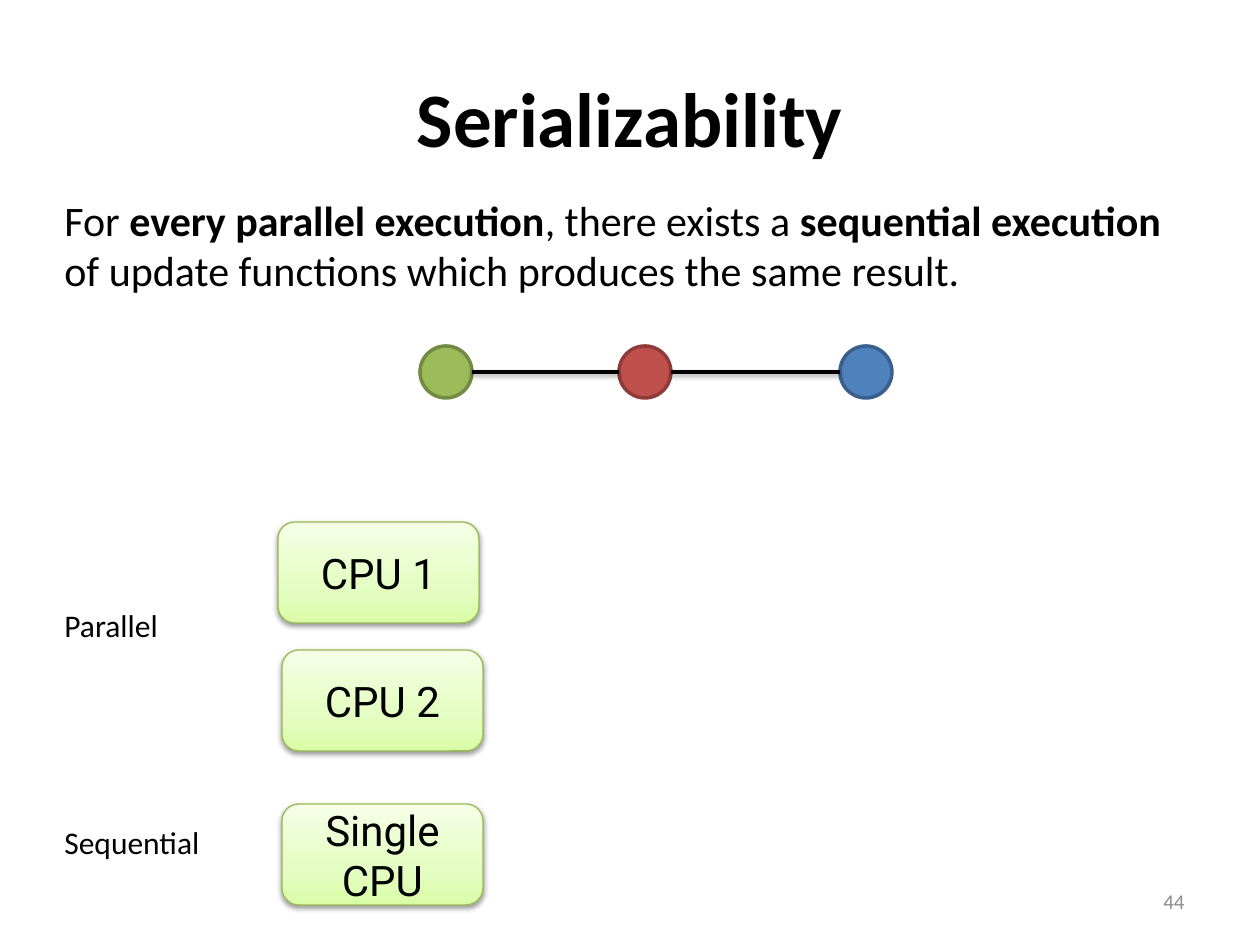
import pptx
import pptx.util
import pptx.dml.color
import pptx.enum.shapes
import pptx.enum.text
import pptx.oxml.ns
from lxml import etree

EMU_PER_PX = 914400 / 126
THEME = {
    "ink": "000000", "muted": "8C8C8C",
    "green": ("9BBB59", "738A42"),
    "red": ("C0504D", "8E3B39"),
    "blue": ("4F81BD", "3A5F8C"),
    "cpu_stops": [(0, "F5FFE6"), (65, "E4FDC2"), (100, "DAFDA7")],
    "cpu_line": "98B954",
    "font": "Calibri", "cpu_font": "Roboto",
    "title": 44, "body": 24, "label": 18, "number": 12,
}
SHAPE = pptx.enum.shapes.MSO_SHAPE
ALIGN = pptx.enum.text.PP_ALIGN
ANCHOR = pptx.enum.text.MSO_ANCHOR
rgb = pptx.dml.color.RGBColor.from_string
qn = pptx.oxml.ns.qn


def px(*lengths):
    return [pptx.util.Emu(round(n * EMU_PER_PX)) for n in lengths]


def write(shape, paragraphs, size, align=ALIGN.LEFT, anchor=ANCHOR.TOP,
          wrap=True, font="font", color="ink"):
    """Fill a shape with paragraphs, each a list of (text, bold) runs."""
    frame = shape.text_frame
    frame.word_wrap, frame.vertical_anchor = wrap, anchor
    for i, runs in enumerate(paragraphs):
        paragraph = frame.paragraphs[0] if i == 0 else frame.add_paragraph()
        paragraph.alignment = align
        for text, bold in runs:
            run = paragraph.add_run()
            run.text = text
            run.font.color.rgb = rgb(THEME[color])
            look = {"name": THEME[font], "size": pptx.util.Pt(THEME[size]), "bold": bold}
            for key, value in look.items():
                setattr(run.font, key, value)


deck = pptx.Presentation()
deck.slide_width, deck.slide_height = px(1260, 945)
slide = deck.slides.add_slide(deck.slide_layouts[6])
shapes = slide.shapes

# Title, definition, row labels and slide number
texts = [
    ((63, 38, 1134, 157), [[("Serializability", True)]],
     {"size": "title", "align": ALIGN.CENTER, "anchor": ANCHOR.MIDDLE}),
    ((52, 188, 1134, 115),
     [[("For ", False), ("every parallel execution", True),
       (", there exists a ", False), ("sequential execution ", True),
       ("of update functions which produces the same result.", False)]],
     {"size": "body"}),
    ((52, 600, 159, 64), [[("Parallel", False)]], {"size": "label", "wrap": False}),
    ((52, 817, 220, 64), [[("Sequential", False)]], {"size": "label", "wrap": False}),
    ((903, 876, 294, 50), [[("44", False)]],
     {"size": "number", "align": ALIGN.RIGHT, "anchor": ANCHOR.MIDDLE, "color": "muted"}),
]
for box, paragraphs, style in texts:
    write(shapes.add_textbox(*px(*box)), paragraphs, **style)

shadowed = []

# CPU boxes
for left, top, lines in [(278, 522, ["CPU 1"]), (282, 650, ["CPU 2"]),
                         (282, 804, ["Single", "CPU"])]:
    cpu = shapes.add_shape(SHAPE.ROUNDED_RECTANGLE, *px(left, top, 201, 101))
    cpu.fill.gradient()
    cpu.fill.gradient_angle = 270
    stops = cpu._element.spPr.find(".//" + qn("a:gsLst"))
    for stop in list(stops):
        stops.remove(stop)
    for position, color in THEME["cpu_stops"]:
        stop = etree.SubElement(stops, qn("a:gs"), pos=str(position * 1000))
        etree.SubElement(stop, qn("a:srgbClr"), val=color)
    cpu.line.color.rgb = rgb(THEME["cpu_line"])
    cpu.line.width = pptx.util.Pt(0.75)
    write(cpu, [[(line, False)] for line in lines], "body", ALIGN.CENTER,
          ANCHOR.MIDDLE, wrap=False, font="cpu_font")
    shadowed.append(cpu)

# Graph vertices
VERTEX, VERTEX_TOP = 52, 346
vertices = [(420, "green"), (619, "red"), (840, "blue")]
for left, color in vertices:
    vertex = shapes.add_shape(SHAPE.OVAL, *px(left, VERTEX_TOP, VERTEX, VERTEX))
    fill, outline = THEME[color]
    vertex.shadow.inherit = False
    vertex.fill.solid()
    vertex.fill.fore_color.rgb = rgb(fill)
    vertex.line.color.rgb = rgb(outline)
    vertex.line.width = pptx.util.Pt(2)

# Edges between neighbouring vertices
middle = VERTEX_TOP + VERTEX // 2
for (left, _), (next_left, _) in zip(vertices, vertices[1:]):
    edge = shapes.add_connector(pptx.enum.shapes.MSO_CONNECTOR.STRAIGHT,
                                *px(left + VERTEX, middle, next_left, middle))
    edge.line.color.rgb = rgb(THEME["ink"])
    edge.line.width = pptx.util.Pt(2)
    shadowed.append(edge)

# Soft shadow below the CPU boxes and edges
for part in shadowed:
    effects = etree.SubElement(part._element.spPr, qn("a:effectLst"))
    shadow = etree.SubElement(effects, qn("a:outerShdw"), blurRad="39370",
                              dist="20320", dir="5400000", rotWithShape="0")
    tint = etree.SubElement(shadow, qn("a:srgbClr"), val=THEME["ink"])
    etree.SubElement(tint, qn("a:alpha"), val="38000")

deck.save("out.pptx")
